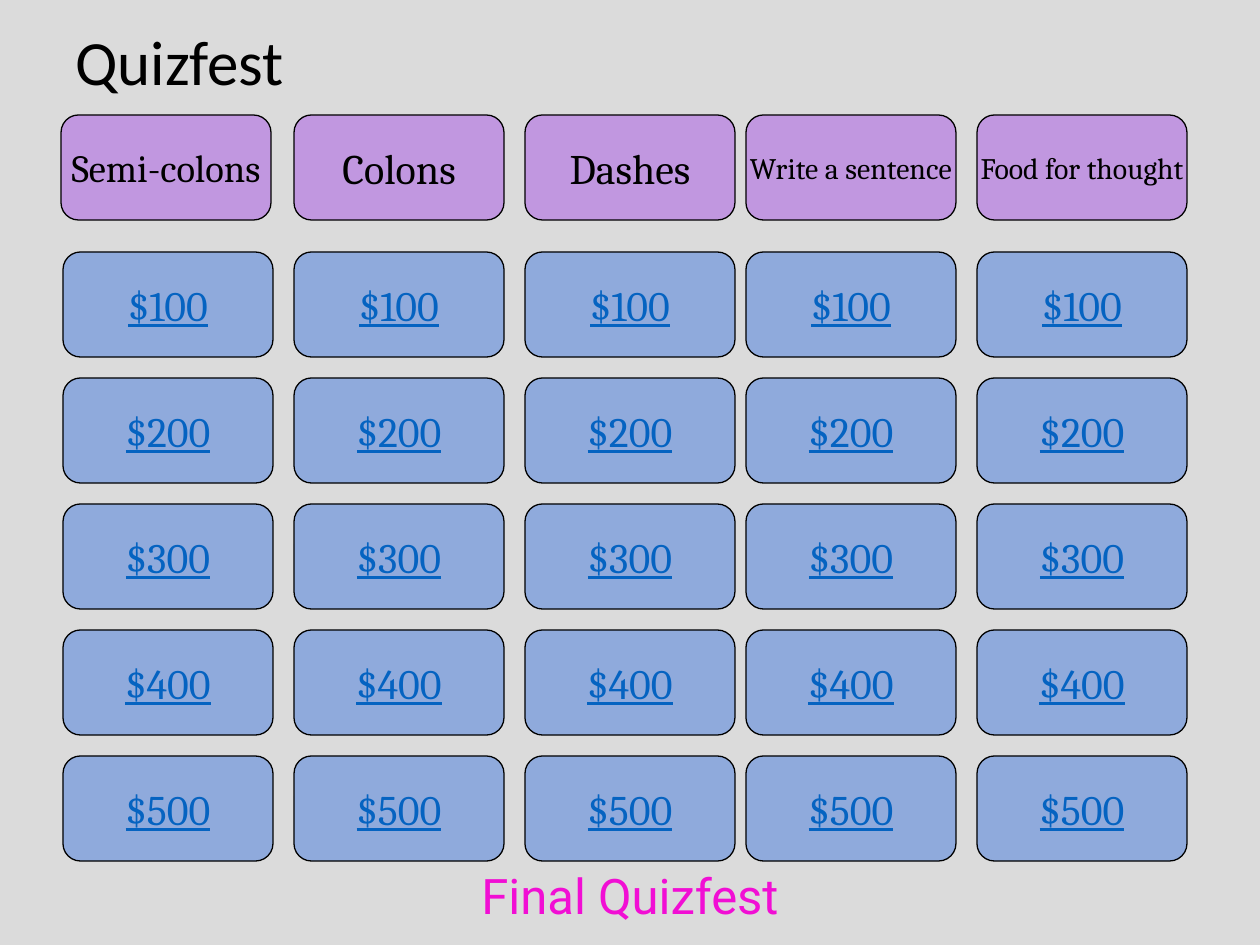
import pptx
import pptx.util
import pptx.dml.color
import pptx.enum.shapes
import pptx.enum.text
from dataclasses import dataclass

PX_PER_INCH = 126
MIDDLE = pptx.enum.text.MSO_ANCHOR.MIDDLE
LEFT = pptx.enum.text.PP_ALIGN.LEFT
CENTER = pptx.enum.text.PP_ALIGN.CENTER


@dataclass(frozen=True)
class Theme:
    background: str = "DBDBDB"
    category: str = "C197E0"
    clue: str = "8FAADC"
    ink: str = "000000"
    link: str = "0563C1"
    final: str = "F10ED4"
    title_font: str = "Calibri"
    card_font: str = "Cambria"
    final_font: str = "Roboto"
    title_size: int = 36
    final_size: int = 28
    card_size: int = 24
    outline: float = 0.75


THEME = Theme()
CARD_WIDTH, CARD_HEIGHT = 210, 105
COLUMN_LEFTS = [0, 231, 462, 683, 914]
ROW_STEP = 126
# Category name, text size, shift from its column
CATEGORIES = [
    ("Semi-colons", 22, -2),
    ("Colons", THEME.card_size, 0),
    ("Dashes", THEME.card_size, 0),
    ("Write a sentence", 17, 0),
    ("Food for thought", 17, 0),
]
VALUES = ["$100", "$200", "$300", "$400", "$500"]


def px(length):
    return pptx.util.Emu(round(length * 914400 / PX_PER_INCH))


def rgb(color):
    return pptx.dml.color.RGBColor.from_string(color)


def write(shape, text, font_name, size, color, alignment):
    shape.text_frame.vertical_anchor = MIDDLE
    paragraph = shape.text_frame.paragraphs[0]
    paragraph.text = text
    paragraph.alignment = alignment
    paragraph.font.name = font_name
    paragraph.font.size = pptx.util.Pt(size)
    paragraph.font.color.rgb = rgb(color)
    return paragraph


def add_heading(slide, box, text, font_name, size, color, alignment):
    shape = slide.shapes.add_textbox(*map(px, box))
    shape.text_frame.word_wrap = True
    return write(shape, text, font_name, size, color, alignment)


def add_card(slide, left, top, text, fill, size, color):
    shape = slide.shapes.add_shape(
        pptx.enum.shapes.MSO_SHAPE.FLOWCHART_ALTERNATE_PROCESS,
        px(left), px(top), px(CARD_WIDTH), px(CARD_HEIGHT))
    shape.shadow.inherit = False
    shape.fill.solid()
    shape.fill.fore_color.rgb = rgb(fill)
    shape.line.color.rgb = rgb(THEME.ink)
    shape.line.width = pptx.util.Pt(THEME.outline)
    shape.text_frame.word_wrap = False
    return write(shape, text, THEME.card_font, size, color, CENTER)


def add_categories(slide, left, top):
    for column, (name, size, shift) in zip(COLUMN_LEFTS, CATEGORIES):
        add_card(slide, left + column + shift, top, name,
                 THEME.category, size, THEME.ink)


def add_clues(slide, left, top):
    for column in COLUMN_LEFTS:
        for row, value in enumerate(VALUES):
            paragraph = add_card(slide, left + column, top + row * ROW_STEP,
                                 value, THEME.clue, THEME.card_size, THEME.link)
            paragraph.font.underline = True


def main():
    presentation = pptx.Presentation()
    presentation.slide_width = px(1260)
    presentation.slide_height = px(945)
    slide = presentation.slides.add_slide(presentation.slide_layouts[6])
    slide.background.fill.solid()
    slide.background.fill.fore_color.rgb = rgb(THEME.background)

    # Title
    title = add_heading(slide, (63, 32, 1134, 67), "Quizfest", THEME.title_font,
                        THEME.title_size, THEME.ink, LEFT)
    title.line_spacing = 0.9

    # Game board
    add_categories(slide, 63, 115)
    add_clues(slide, 63, 252)

    # Final round
    add_heading(slide, (63, 861, 1134, 67), "Final Quizfest", THEME.final_font,
                THEME.final_size, THEME.final, CENTER)

    presentation.save("out.pptx")


if __name__ == "__main__":
    main()
